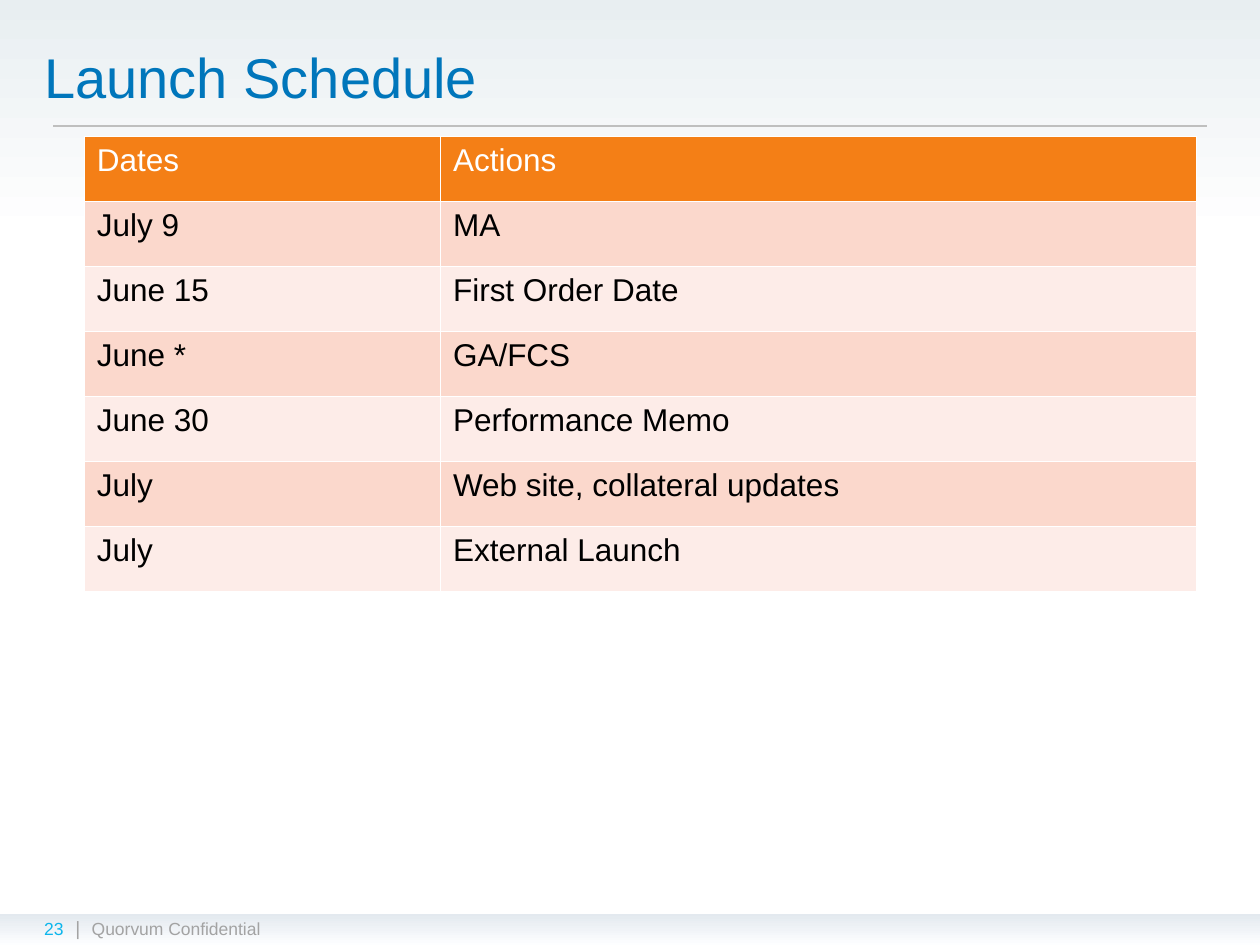
from lxml import etree
from pptx import Presentation
from pptx.dml.color import RGBColor
from pptx.enum.shapes import MSO_CONNECTOR, MSO_SHAPE
from pptx.enum.text import MSO_ANCHOR, PP_ALIGN
from pptx.oxml.ns import qn
from pptx.util import Cm, Pt

STRAIGHT = MSO_CONNECTOR.STRAIGHT
RECTANGLE = MSO_SHAPE.RECTANGLE
MIDDLE = MSO_ANCHOR.MIDDLE
LEFT = PP_ALIGN.LEFT

WHITE = RGBColor(0xFF, 0xFF, 0xFF)
BLACK = RGBColor(0x00, 0x00, 0x00)
MIST = RGBColor(0xE8, 0xEE, 0xF1)
FOOTER_TOP = RGBColor(0xE3, 0xE9, 0xEF)
FOOTER_END = RGBColor(0xFD, 0xFE, 0xFF)
BLUE = RGBColor(0x00, 0x76, 0xBB)
CYAN = RGBColor(0x0D, 0xB6, 0xEC)
GREY = RGBColor(0xA3, 0xA3, 0xA3)
RULE_GREY = RGBColor(0xBF, 0xBF, 0xBF)
ORANGE = RGBColor(0xF4, 0x7F, 0x16)
PEACH = RGBColor(0xFB, 0xD8, 0xCC)
PALE_PEACH = RGBColor(0xFD, 0xEC, 0xE8)

SCHEDULE = [
    ("Dates", "Actions"),
    ("July 9", "MA"),
    ("June 15", "First Order Date"),
    ("June *", "GA/FCS"),
    ("June 30", "Performance Memo"),
    ("July", "Web site, collateral updates"),
    ("July", "External Launch"),
]


class SlideBuilder:
    font_name = "Arial"

    def __init__(self, page):
        self.page = page

    def fill_text(self, frame, text, size, color):
        para = frame.paragraphs[0]
        para.alignment = LEFT
        span = para.add_run()
        span.text = text
        span.font.color.rgb = color
        style = {"name": self.font_name, "size": Pt(size), "bold": False}
        for name, value in style.items():
            setattr(span.font, name, value)

    def gradient_band(self, left, top, width, height, stops):
        band = self.page.shapes.add_shape(
            RECTANGLE, Cm(left), Cm(top), Cm(width), Cm(height))
        band.shadow.inherit = False
        band.line.fill.background()
        band.fill.gradient()
        band.fill.gradient_angle = 270
        for stop, (position, color) in zip(band.fill.gradient_stops, stops):
            stop.position = position
            stop.color.rgb = color

    def rule(self, left, right, top, color, width):
        line = self.page.shapes.add_connector(
            STRAIGHT, Cm(left), Cm(top), Cm(right), Cm(top))
        line.line.color.rgb = color
        line.line.width = Pt(width)
        etree.SubElement(line.element.spPr, qn("a:effectLst"))

    def title(self, left, top, width, height, text, size, color):
        box = self.page.shapes.title
        place = {"left": left, "top": top, "width": width, "height": height}
        for name, value in place.items():
            setattr(box, name, Cm(value))
        box.element.getparent().append(box.element)
        box.text_frame.vertical_anchor = MIDDLE
        self.fill_text(box.text_frame, text, size, color)

    def label(self, left, top, width, height, text, size, color):
        box = self.page.shapes.add_textbox(
            Cm(left), Cm(top), Cm(width), Cm(height))
        box.text_frame.word_wrap = True
        self.fill_text(box.text_frame, text, size, color)

    def border(self, cell, side, width):
        edge = etree.SubElement(
            cell._tc.get_or_add_tcPr(), qn(f"a:{side}"), w=str(Pt(width)))
        fill = etree.SubElement(edge, qn("a:solidFill"))
        etree.SubElement(fill, qn("a:srgbClr"), val=str(WHITE))

    def table(self, left, top, widths, row_height, rows, size):
        grid = self.page.shapes.add_table(
            len(rows), len(widths), Cm(left), Cm(top),
            Cm(sum(widths)), Cm(row_height * len(rows))).table
        for column, width in zip(grid.columns, widths):
            column.width = Cm(width)
        for index, (row, texts) in enumerate(zip(grid.rows, rows)):
            row.height = Cm(row_height)
            header = index == 0
            shade = ORANGE if header else (PALE_PEACH, PEACH)[index % 2]
            for cell, text in zip(row.cells, texts):
                for side in ("lnL", "lnR", "lnT", "lnB"):
                    self.border(cell, side, 1)
                cell.fill.solid()
                cell.fill.fore_color.rgb = shade
                self.fill_text(cell.text_frame, text, size, WHITE if header else BLACK)


def main():
    deck = Presentation()
    deck.slide_width = Cm(25.4)
    deck.slide_height = Cm(19.05)
    slide = SlideBuilder(deck.slides.add_slide(deck.slide_layouts[5]))

    slide.gradient_band(0, 0, 25.4, 19.05, [(0, MIST), (0.25, WHITE)])
    slide.gradient_band(0, 18.42, 25.4, 0.63, [(0, FOOTER_TOP), (1, FOOTER_END)])
    slide.label(1.6, 18.39, 12.7, 1.19, "Quorvum Confidential", 10, GREY)
    slide.label(1.27, 18.34, 0.7, 0.69, "|", 11, GREY)
    slide.rule(1.07, 24.33, 2.54, RULE_GREY, 0.75)
    slide.title(0.64, 0.64, 21.59, 1.78, "Launch Schedule", 32, BLUE)
    slide.label(0.64, 18.39, 1.3, 0.69, "23", 10, CYAN)
    slide.table(1.7, 2.75, [7.18, 15.24], 1.31, SCHEDULE, 18)
    deck.save("out.pptx")


if __name__ == "__main__":
    main()
